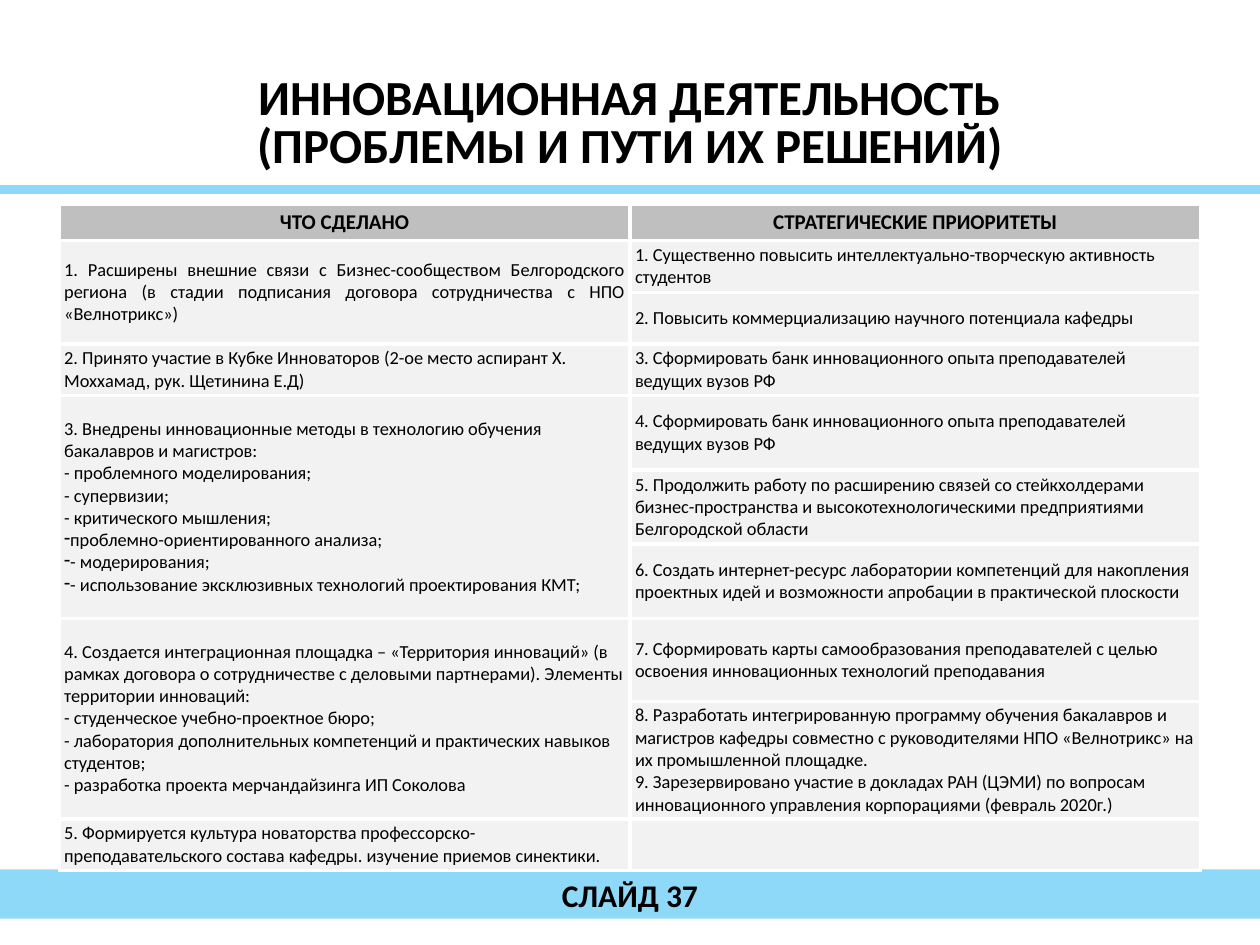
from dataclasses import dataclass

from lxml import etree
from pptx import Presentation
from pptx.dml.color import RGBColor
from pptx.enum.shapes import MSO_SHAPE as Shape
from pptx.enum.text import MSO_ANCHOR as Anchor, PP_ALIGN as Align
from pptx.oxml.ns import qn
from pptx.util import Inches, Pt

COLORS = {
    "band": "8ED9F8",
    "header": "BFBFBF",
    "body": "F2F2F2",
    "border": "FFFFFF",
    "text": "000000",
}
FONT = "Calibri"
BORDER_WIDTH = Pt(2.25)
TABLE_LEFT, TABLE_TOP, COLUMN_WIDTH = 0.47, 1.62, 4.53
ROW_HEIGHTS = [0.29] + [0.41] * 3 + [0.59] * 3 + [0.66, 0.93, 0.41]
HEADERS = ["ЧТО СДЕЛАНО", "СТРАТЕГИЧЕСКИЕ ПРИОРИТЕТЫ"]


@dataclass
class Achievement:
    """One left-hand entry, spanning `rows` priorities on the right."""
    lines: list[str]
    rows: int = 1
    dashed: tuple[str, ...] = ()
    align: Align = Align.LEFT


@dataclass
class Band:
    top: float
    height: float


@dataclass
class Caption:
    text: str
    top: float
    height: float
    size: float
    line_spacing: float = 1.0


BANDS = [Band(1.47, 0.07), Band(6.9, 0.39)]
CAPTIONS = [
    Caption("ИННОВАЦИОННАЯ ДЕЯТЕЛЬНОСТЬ\v(ПРОБЛЕМЫ И ПУТИ ИХ РЕШЕНИЙ)", 0.6, 0.79, 28, 0.8),
    Caption("СЛАЙД 37", 6.9, 0.4, 18),
]
ACHIEVEMENTS = [
    Achievement(
        ["1. Расширены внешние связи с Бизнес-сообществом Белгородского региона "
         "(в стадии подписания договора сотрудничества с НПО «Велнотрикс»)"],
        rows=2, align=Align.JUSTIFY),
    Achievement(
        ["2. Принято участие в Кубке Инноваторов (2-ое место аспирант Х. Моххамад, "
         "рук. Щетинина Е.Д)"]),
    Achievement(
        ["3. Внедрены инновационные методы в технологию обучения бакалавров и магистров:",
         "- проблемного моделирования;",
         "- супервизии;",
         "- критического мышления;"],
        rows=3,
        dashed=("проблемно-ориентированного анализа;",
                "- модерирования;",
                "- использование эксклюзивных технологий проектирования КМТ;")),
    Achievement(
        ["4. Создается интеграционная площадка – «Территория инноваций» (в рамках договора "
         "о сотрудничестве с деловыми партнерами). Элементы территории инноваций:",
         "- студенческое учебно-проектное бюро;",
         "- лаборатория дополнительных компетенций и практических навыков студентов;",
         "- разработка проекта мерчандайзинга ИП Соколова"],
        rows=2),
    Achievement(
        ["5. Формируется культура новаторства профессорско-преподавательского состава "
         "кафедры. изучение приемов синектики."]),
]
PRIORITIES = [
    ["1. Существенно повысить интеллектуально-творческую активность студентов"],
    ["2. Повысить коммерциализацию научного потенциала кафедры"],
    ["3. Сформировать банк инновационного опыта преподавателей ведущих вузов РФ"],
    ["4. Сформировать банк инновационного опыта преподавателей ведущих вузов РФ"],
    ["5. Продолжить работу по расширению связей со стейкхолдерами бизнес-пространства "
     "и высокотехнологическими предприятиями Белгородской области"],
    ["6. Создать интернет-ресурс лаборатории компетенций для накопления проектных идей "
     "и возможности апробации в практической плоскости"],
    ["7. Сформировать карты самообразования преподавателей с целью освоения "
     "инновационных технологий преподавания"],
    ["8. Разработать интегрированную программу обучения бакалавров и магистров кафедры "
     "совместно с руководителями НПО «Велнотрикс» на их промышленной площадке.",
     "9. Зарезервировано участие в докладах РАН (ЦЭМИ) по вопросам инновационного "
     "управления корпорациями (февраль 2020г.)"],
    [],
]


def rgb(name: str) -> RGBColor:
    return RGBColor.from_string(COLORS[name])


def format_paragraph(paragraph, size: float, bold: bool, align: Align) -> None:
    paragraph.alignment = align
    for run in paragraph.runs:
        run.font.name = FONT
        run.font.size = Pt(size)
        run.font.bold = bold
        run.font.color.rgb = rgb("text")


def add_band(slide, band: Band) -> None:
    stripe = slide.shapes.add_shape(
        Shape.RECTANGLE, 0, Inches(band.top), Inches(10), Inches(band.height))
    stripe.shadow.inherit = False
    stripe.fill.solid()
    stripe.fill.fore_color.rgb = rgb("band")
    stripe.line.fill.background()


def add_caption(slide, caption: Caption) -> None:
    box = slide.shapes.add_textbox(
        0, Inches(caption.top), Inches(10), Inches(caption.height))
    frame = box.text_frame
    frame.word_wrap = True
    frame.vertical_anchor = Anchor.MIDDLE
    frame.text = caption.text
    paragraph = frame.paragraphs[0]
    paragraph.line_spacing = caption.line_spacing
    format_paragraph(paragraph, caption.size, True, Align.CENTER)


def style_cell(cell, fill: str, vertical_margin: float) -> None:
    properties = cell._tc.get_or_add_tcPr()
    for side in ("lnL", "lnR", "lnT", "lnB"):
        line = etree.SubElement(properties, qn(f"a:{side}"), w=str(BORDER_WIDTH))
        solid = etree.SubElement(line, qn("a:solidFill"))
        etree.SubElement(solid, qn("a:srgbClr"), val=COLORS["border"])
    cell.fill.solid()
    cell.fill.fore_color.rgb = rgb(fill)
    cell.vertical_anchor = Anchor.MIDDLE
    cell.margin_left = cell.margin_right = Inches(0.04)
    cell.margin_top = cell.margin_bottom = Inches(vertical_margin)


def add_dash_bullet(paragraph) -> None:
    properties = paragraph._p.get_or_add_pPr()
    properties.set("marL", "0")
    properties.set("indent", "0")
    etree.SubElement(properties, qn("a:buChar"), char="-")


def write_body(cell, lines: list[str], dashed: tuple[str, ...] = (),
               align: Align = Align.LEFT) -> None:
    cell.text_frame.text = "\n".join([*lines, *dashed])
    for index, paragraph in enumerate(cell.text_frame.paragraphs):
        if index >= len(lines) and dashed:
            add_dash_bullet(paragraph)
        format_paragraph(paragraph, 10.5, False, align)


def add_plan_table(slide) -> None:
    table = slide.shapes.add_table(
        len(ROW_HEIGHTS), len(HEADERS), Inches(TABLE_LEFT), Inches(TABLE_TOP),
        Inches(COLUMN_WIDTH * len(HEADERS)), Inches(sum(ROW_HEIGHTS))).table
    table.first_row = table.horz_banding = False
    for column in table.columns:
        column.width = Inches(COLUMN_WIDTH)
    for row, height in zip(table.rows, ROW_HEIGHTS):
        row.height = Inches(height)
        for cell in row.cells:
            style_cell(cell, "body", 0.02)

    for cell, header in zip(table.rows[0].cells, HEADERS):
        cell.fill.fore_color.rgb = rgb("header")
        cell.margin_top = cell.margin_bottom = Inches(0.04)
        cell.text_frame.text = header
        format_paragraph(cell.text_frame.paragraphs[0], 12, True, Align.CENTER)

    for row_index, priority in enumerate(PRIORITIES, start=1):
        write_body(table.cell(row_index, 1), priority)

    first_row = 1
    for item in ACHIEVEMENTS:
        cell = table.cell(first_row, 0)
        if item.rows > 1:
            cell.merge(table.cell(first_row + item.rows - 1, 0))
        write_body(cell, item.lines, item.dashed, item.align)
        first_row += item.rows


def main() -> None:
    presentation = Presentation()
    presentation.slide_width, presentation.slide_height = Inches(10), Inches(7.5)
    slide = presentation.slides.add_slide(presentation.slide_layouts[6])
    for band, caption in zip(BANDS, CAPTIONS):
        add_band(slide, band)
        add_caption(slide, caption)
    add_plan_table(slide)
    presentation.save("out.pptx")


if __name__ == "__main__":
    main()
